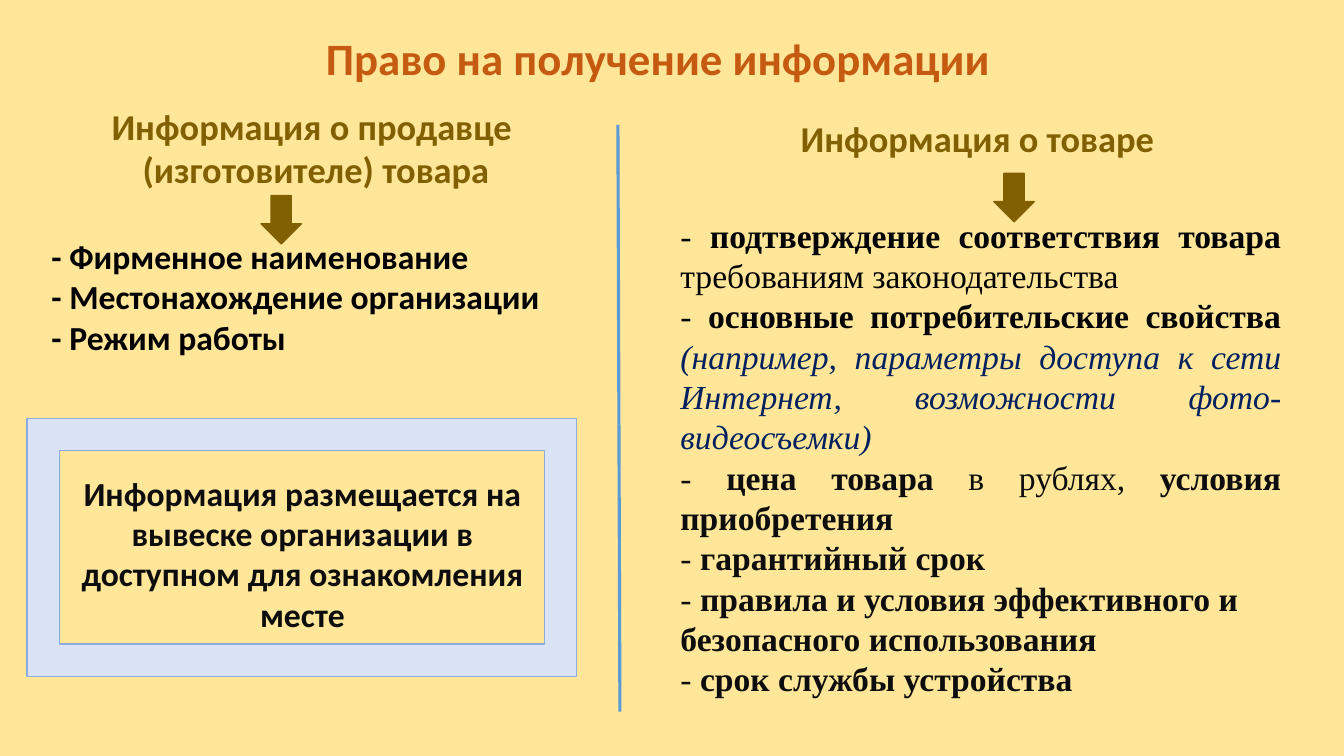
from lxml import etree
from pptx import Presentation
from pptx.dml.color import RGBColor
from pptx.enum.shapes import MSO_CONNECTOR, MSO_SHAPE
from pptx.enum.text import MSO_ANCHOR, MSO_AUTO_SIZE, PP_ALIGN
from pptx.oxml.ns import qn
from pptx.util import Inches, Pt

FRAME, DOWN_ARROW = MSO_SHAPE.FRAME, MSO_SHAPE.DOWN_ARROW
STRAIGHT = MSO_CONNECTOR.STRAIGHT
TOP, FIXED_SIZE = MSO_ANCHOR.TOP, MSO_AUTO_SIZE.NONE
LEFT, CENTER, JUSTIFY = PP_ALIGN.LEFT, PP_ALIGN.CENTER, PP_ALIGN.JUSTIFY

SAND = RGBColor(0xFF, 0xE6, 0x99)
ORANGE = RGBColor(0xC5, 0x5A, 0x11)
OLIVE = RGBColor(0x80, 0x60, 0x00)
BLACK = RGBColor(0x00, 0x00, 0x00)
INK = RGBColor(0x0D, 0x0D, 0x0D)
NAVY = RGBColor(0x00, 0x20, 0x60)
PALE_BLUE = RGBColor(0xDA, 0xE3, 0xF3)
FRAME_BLUE = RGBColor(0x8F, 0xAA, 0xDC)
DIVIDER_BLUE = RGBColor(0x5B, 0x9B, 0xD5)

SLIDE_WIDTH, SLIDE_HEIGHT = Inches(13.33), Inches(7.5)
COLUMN, ROW = SLIDE_WIDTH / 40, SLIDE_HEIGHT / 30
COMPARISON_LAYOUT = 4

SELLER_FACTS = [
    "- Фирменное наименование",
    "- Местонахождение организации",
    "- Режим работы",
]
PRODUCT_FACTS = [
    (JUSTIFY, BLACK, [("подтверждение соответствия товара ", True),
                      ("требованиям законодательства ", False)]),
    (JUSTIFY, BLACK, [("основные потребительские свойства ", True)]),
    (JUSTIFY, INK, [("цена товара ", True), ("в рублях, ", False),
                    ("условия приобретения", True)]),
    (LEFT, INK, [("гарантийный срок", True)]),
    (LEFT, INK, [("правила и условия эффективного и безопасного использования", True)]),
    (LEFT, INK, [("срок службы устройства", True)]),
]
EXAMPLE_FACT = 1
EXAMPLE = "(например, параметры доступа к сети Интернет, возможности фото-видеосъемки)"


def grid(left, top, width, height):
    return (round(left * COLUMN), round(top * ROW),
            round(width * COLUMN), round(height * ROW))


def prepare_text(shape, area):
    shape.left, shape.top, shape.width, shape.height = grid(*area)
    text_frame = shape.text_frame
    text_frame.word_wrap = True
    text_frame.auto_size = FIXED_SIZE
    text_frame.vertical_anchor = TOP
    return text_frame


def format_paragraph(paragraph, alignment):
    paragraph.alignment = alignment
    paragraph.space_before = Pt(0)
    properties = paragraph._p.get_or_add_pPr()
    properties.set("marL", "0")
    properties.set("indent", "0")
    etree.SubElement(properties, qn("a:buNone"))


def format_run(run, font_name, size, color, bold=True, italic=False):
    font = run.font
    font.name, font.size = font_name, Pt(size)
    font.bold, font.italic = bold, italic
    font.color.rgb = color


def write_bold(shape, area, lines, size, color, alignment=CENTER):
    text_frame = prepare_text(shape, area)
    text_frame.text = "\n".join(lines)
    for paragraph in text_frame.paragraphs:
        format_paragraph(paragraph, alignment)
        for run in paragraph.runs:
            format_run(run, "Calibri", size, color)


def write_product_facts(shape, area):
    text_frame = prepare_text(shape, area)
    for index, (alignment, color, parts) in enumerate(PRODUCT_FACTS):
        paragraph = text_frame.add_paragraph() if index else text_frame.paragraphs[0]
        format_paragraph(paragraph, alignment)
        for text, bold in [("- ", False), *parts]:
            run = paragraph.add_run()
            run.text = text
            format_run(run, "Times New Roman", 24, color, bold)
        if index == EXAMPLE_FACT:
            run = paragraph.add_run()
            run.text = EXAMPLE
            format_run(run, "Times New Roman", 24, NAVY, False, True)


def add_figure(slide, kind, area, fill, line):
    shape = slide.shapes.add_shape(kind, *grid(*area))
    shape.shadow.inherit = False
    shape.fill.solid()
    shape.fill.fore_color.rgb = fill
    shape.line.color.rgb = line
    shape.line.width = Pt(1)


def add_divider(slide, start, end):
    connector = slide.shapes.add_connector(STRAIGHT, *grid(*start, *end))
    connector.line.color.rgb = DIVIDER_BLUE
    connector.line.width = Pt(2.25)
    etree.SubElement(connector._element.spPr, qn("a:effectLst"))


def main():
    presentation = Presentation()
    presentation.slide_width, presentation.slide_height = SLIDE_WIDTH, SLIDE_HEIGHT
    slide = presentation.slides.add_slide(presentation.slide_layouts[COMPARISON_LAYOUT])
    slide.background.fill.solid()
    slide.background.fill.fore_color.rgb = SAND

    title, seller_heading, seller_list, product_heading, product_list = slide.placeholders
    write_bold(title, (1.23, 1, 36.72, 2.56), ["Право на получение информации"], 32, ORANGE)
    write_bold(seller_heading, (2, 3.92, 14.82, 3.92),
               ["Информация о продавце ", "(изготовителе) товара"], 26, OLIVE)
    write_bold(seller_list, (1.23, 9.16, 15.54, 6.48), SELLER_FACTS, 24, BLACK, LEFT)
    write_bold(product_heading, (23.49, 4.4, 11.46, 2.16), ["Информация о товаре "], 26, OLIVE)
    write_product_facts(product_list, (19.95, 8.32, 18.48, 20.12))

    add_figure(slide, FRAME, (0.81, 16.6, 16.35, 10.24), PALE_BLUE, FRAME_BLUE)
    notice = slide.shapes.add_textbox(0, 0, 0, 0)
    write_bold(notice, (1.98, 18.56, 14.04, 6.88),
               ["Информация размещается на вывеске организации "
                "в доступном для ознакомления месте"], 24, INK)

    add_divider(slide, (18.39, 4.96), (18.45, 28.24))
    for left, top in ((7.77, 7.76), (29.58, 6.88)):
        add_figure(slide, DOWN_ARROW, (left, top, 1.2, 1.92), OLIVE, OLIVE)

    presentation.save("out.pptx")


if __name__ == "__main__":
    main()
